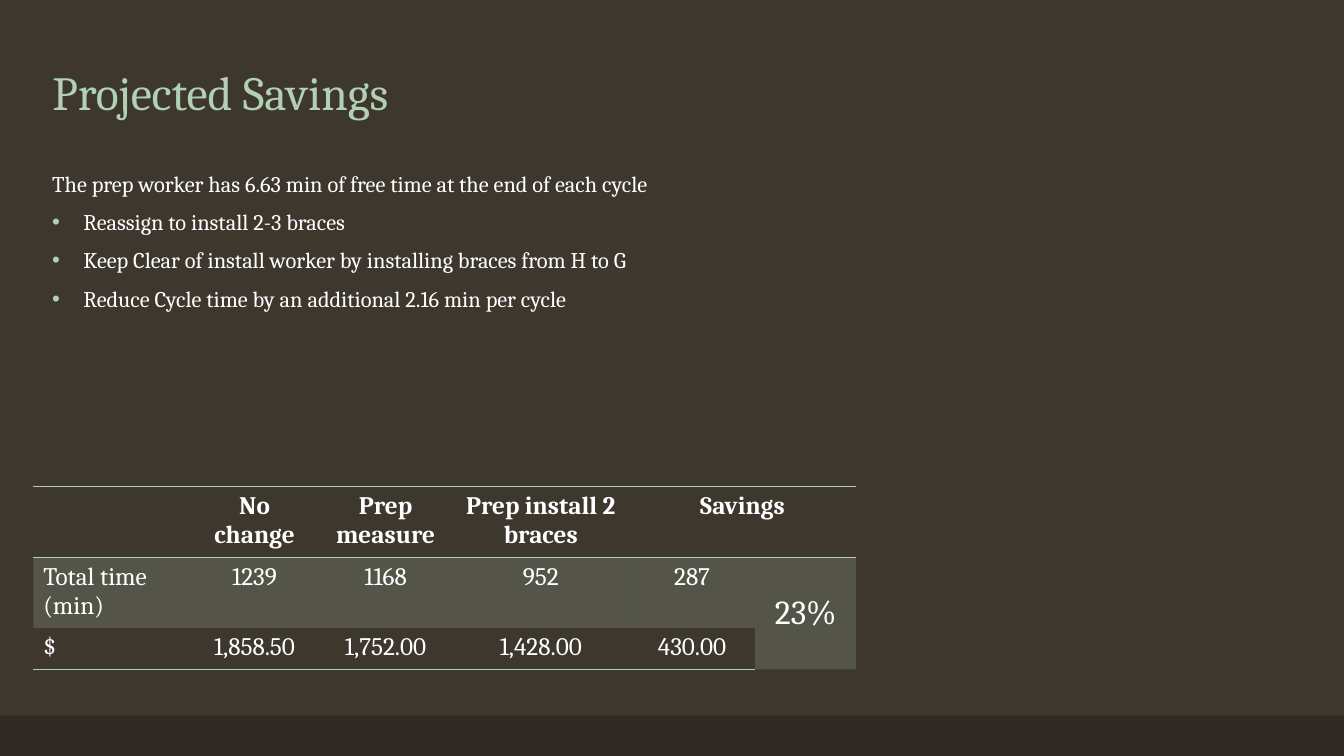
from lxml import etree
from pptx import Presentation, util as u
from pptx.dml.color import RGBColor
from pptx.enum import shapes, text
from pptx.oxml.ns import qn

WIDTH, HEIGHT = 13.33, 7.5
BACKGROUND, FOOTER, SAGE, WHITE = "3D372E", "2E2923", "B2D0B4", "FFFFFF"
FONT = "Cambria"
LEFT = 0.42
NO_TABLE_STYLE = "{2D5ABB26-0587-4C30-8999-92F81FD0307C}"

FINDING = "The prep worker has 6.63 min of free time at the end of each cycle"
ACTIONS = [
    "Reassign to install 2-3 braces",
    "Keep Clear of install worker by installing braces from H to G",
    "Reduce Cycle time by an additional 2.16 min per cycle",
]
SAVINGS_COLUMNS = [1.56, 1.27, 1.33, 1.75, 1.25, 1]
SAVINGS_ROW = 0.41
SAVINGS = [
    ["", "No change", "Prep measure", "Prep install 2 braces", "Savings", ""],
    ["Total time (min)", "1239", "1168", "952", "287", "23%"],
    ["$", "1,858.50", "1,752.00", "1,428.00", "430.00", ""],
]


def color(value):
    return RGBColor.from_string(value)


def paint(fill, value):
    fill.solid()
    fill.fore_color.rgb = color(value)


def write(paragraph, words, size=18, ink=WHITE, bold=False, align="LEFT",
          spacing=None, before=None):
    paragraph.alignment = getattr(text.PP_ALIGN, align)
    paragraph.line_spacing = spacing
    if before is not None:
        paragraph.space_before = u.Pt(before)
    run = paragraph.add_run()
    run.text = words
    run.font.name, run.font.size, run.font.bold = FONT, u.Pt(size), bold
    run.font.color.rgb = color(ink)


def add_bullet(paragraph, indent=0.31):
    props = paragraph._p.get_or_add_pPr()
    props.set("marL", str(u.Inches(indent)))
    props.set("indent", str(-u.Inches(indent)))
    tint = etree.SubElement(props, qn("a:buClr"))
    etree.SubElement(tint, qn("a:srgbClr"), val=SAGE)
    etree.SubElement(props, qn("a:buFont"), typeface="Arial")
    etree.SubElement(props, qn("a:buChar"), char="•")


def add_rule(cell, side):
    """Draw a 1 pt line on the cell's side: lnT or lnB."""
    line = etree.SubElement(cell._tc.get_or_add_tcPr(), qn("a:" + side), w=str(u.Pt(1)))
    solid = etree.SubElement(line, qn("a:solidFill"))
    etree.SubElement(solid, qn("a:srgbClr"), val=SAGE)


def tint_cell(cell, percent):
    paint(cell.fill, SAGE)
    for ink in cell._tc.tcPr.findall(qn("a:solidFill") + "/" + qn("a:srgbClr")):
        etree.SubElement(ink, qn("a:alpha"), val=str(percent * 1000))


def add_footer_band(slide):
    top = 7.1
    band = slide.shapes.add_shape(shapes.MSO_SHAPE.RECTANGLE, 0, u.Inches(top),
                                  u.Inches(WIDTH), u.Inches(HEIGHT - top))
    band.shadow.inherit = False
    paint(band.fill, FOOTER)
    band.line.fill.background()


def set_title(slide, words):
    title = slide.shapes.title
    title.left, title.top = u.Inches(LEFT), u.Inches(0.03)
    title.width, title.height = u.Inches(8.25), u.Inches(1.22)
    frame = title.text_frame
    frame.vertical_anchor = text.MSO_ANCHOR.BOTTOM
    frame.auto_size = text.MSO_AUTO_SIZE.NONE
    write(frame.paragraphs[0], words, size=34, ink=SAGE, spacing=0.9)


def add_findings(slide):
    box = slide.shapes.add_textbox(u.Inches(LEFT), u.Inches(1.67), u.Inches(8), u.Inches(3))
    frame = box.text_frame
    frame.word_wrap = True
    body = dict(size=16, spacing=0.9, before=10)
    write(frame.paragraphs[0], FINDING, **body)
    for action in ACTIONS:
        paragraph = frame.add_paragraph()
        write(paragraph, action, **body)
        add_bullet(paragraph)


def add_savings_table(slide):
    rows, columns = len(SAVINGS), len(SAVINGS_COLUMNS)
    holder = slide.shapes.add_table(
        rows, columns, u.Inches(0.33), u.Inches(4.83),
        u.Inches(sum(SAVINGS_COLUMNS)), u.Inches(SAVINGS_ROW * rows))
    table = holder.table
    table._tbl.tblPr.find(qn("a:tableStyleId")).text = NO_TABLE_STYLE
    for column, width in zip(table.columns, SAVINGS_COLUMNS):
        column.width = u.Inches(width)
    for r, values in enumerate(SAVINGS):
        table.rows[r].height = u.Inches(SAVINGS_ROW)
        for c, value in enumerate(values):
            cell = table.cell(r, c)
            if r == 0:
                add_rule(cell, "lnT")
            if r in (0, rows - 1):
                add_rule(cell, "lnB")
            if r == 1:
                tint_cell(cell, 20)
            else:
                cell.fill.background()
            if value:
                write(cell.text_frame.paragraphs[0], value, bold=r == 0,
                      size=24 if value.endswith("%") else 18,
                      align="CENTER" if c else "LEFT")
    last = columns - 1
    table.cell(0, last - 1).merge(table.cell(0, last))
    share = table.cell(1, last)
    share.merge(table.cell(2, last))
    share.vertical_anchor = text.MSO_ANCHOR.MIDDLE


def main():
    deck = Presentation()
    deck.slide_width, deck.slide_height = u.Inches(WIDTH), u.Inches(HEIGHT)
    slide = deck.slides.add_slide(deck.slide_layouts.get_by_name("Title Only"))
    paint(slide.background.fill, BACKGROUND)
    add_footer_band(slide)
    set_title(slide, "Projected Savings")
    add_findings(slide)
    add_savings_table(slide)
    deck.save("out.pptx")


if __name__ == "__main__":
    main()
